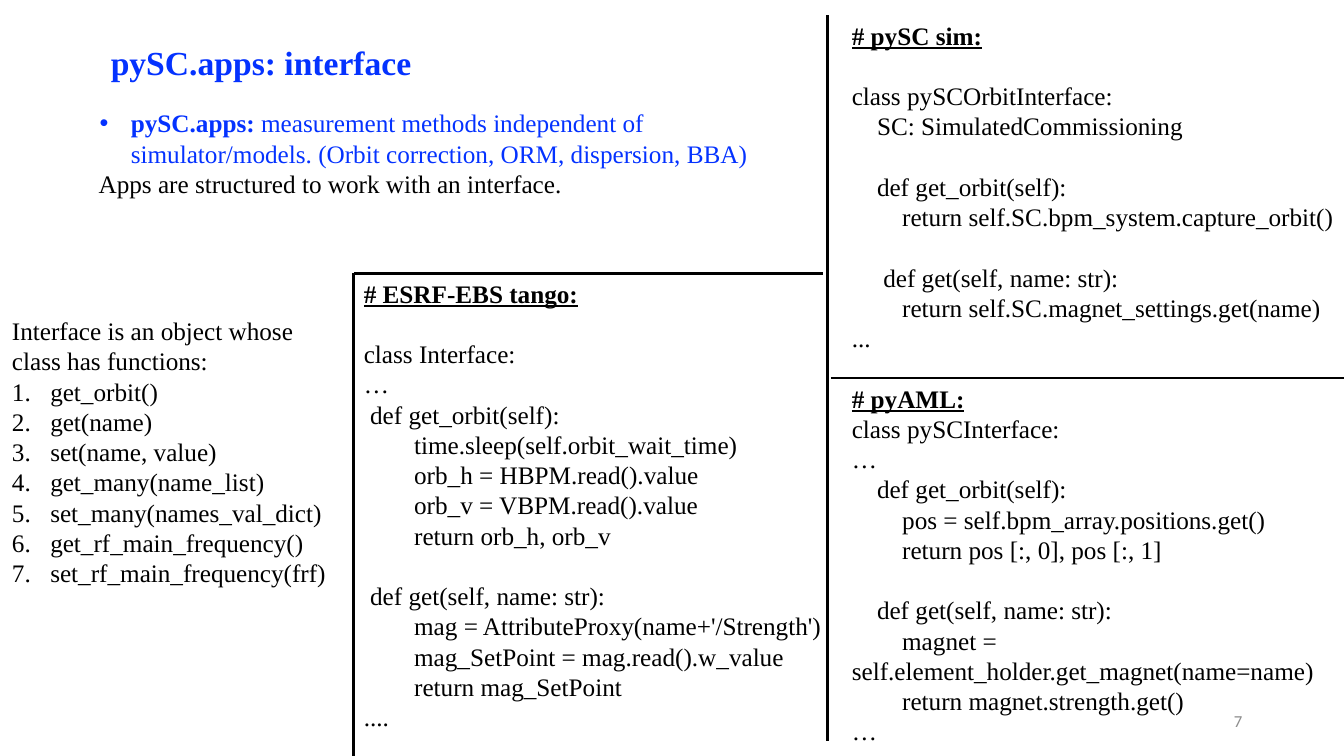
from lxml.etree import SubElement
from pptx import Presentation
from pptx.dml.color import RGBColor
from pptx.enum.shapes import MSO_CONNECTOR
from pptx.enum.text import MSO_ANCHOR, PP_ALIGN
from pptx.oxml.ns import qn
from pptx.util import Inches, Pt

COLORS = {"blue": "0432FF", "black": "000000", "gray": "8C8C8C"}
SERIF = "Times New Roman"
BODY = {"name": SERIF, "size": Pt(18)}
BOLD = {**BODY, "bold": True}
HEADING = {**BOLD, "underline": True}
BLANK_LINE = Pt(21.6)

TANGO = """# ESRF-EBS tango:

class Interface:
…
 def get_orbit(self):
        time.sleep(self.orbit_wait_time)
        orb_h = HBPM.read().value
        orb_v = VBPM.read().value
        return orb_h, orb_v

 def get(self, name: str):
        mag = AttributeProxy(name+'/Strength')
        mag_SetPoint = mag.read().w_value
        return mag_SetPoint
...."""

SIM_AND_AML = """# pySC sim:

class pySCOrbitInterface:
    SC: SimulatedCommissioning

    def get_orbit(self):
        return self.SC.bpm_system.capture_orbit()

     def get(self, name: str):
        return self.SC.magnet_settings.get(name)
...

# pyAML:
class pySCInterface:
…
    def get_orbit(self):
        pos = self.bpm_array.positions.get()
        return pos [:, 0], pos [:, 1]

    def get(self, name: str):
        magnet = self.element_holder.get_magnet(name=name)
        return magnet.strength.get()
…"""

FUNCTIONS = [
    "get_orbit()", "get(name)", "set(name, value)", "get_many(name_list)",
    "set_many(names_val_dict)", "get_rf_main_frequency()",
    "set_rf_main_frequency(frf)",
]

DIVIDERS = [
    (3.51, 2.71, 3.51, 7.5),
    (3.51, 2.71, 8.16, 2.71),
    (8.21, 0.15, 8.21, 7.35),
    (8.24, 3.75, 13.33, 3.75),
]


def add_box(slide, left, top, width, height):
    """Add a wrapping text box and return its text frame."""
    sp = slide.shapes.add_textbox(*map(Inches, (left, top, width, height)))
    tf = sp.text_frame
    tf.word_wrap = True
    return tf


def next_paragraph(tf):
    """Return the empty first paragraph, or a new one after it."""
    p = tf.paragraphs[0]
    return tf.add_paragraph() if p.runs else p


def add_run(p, text, color="black", style=BODY):
    """Add a run with the given colour and font values."""
    r = p.add_run()
    r.text = text
    for name, value in style.items():
        setattr(r.font, name, value)
    r.font.color.rgb = RGBColor.from_string(COLORS[color])


def set_bullet(p, margin, hanging, tag, **attributes):
    """Give a paragraph a hanging indent and a bullet element."""
    pPr = p._p.get_or_add_pPr()
    pPr.set("marL", str(Inches(margin)))
    pPr.set("indent", str(-Inches(hanging)))
    SubElement(pPr, qn("a:buFont"), typeface="Arial" if tag == "a:buChar" else "+mj-lt")
    SubElement(pPr, qn(tag), **attributes)


def add_code(slide, code, *box):
    """Add a code listing with underlined headings and spaced blocks."""
    tf = add_box(slide, *box)
    after_blank = False
    for line in code.splitlines():
        if line:
            p = next_paragraph(tf)
            if after_blank:
                p.space_before = BLANK_LINE
            add_run(p, line, style=HEADING if line.startswith("#") else BODY)
        after_blank = not line


def add_intro(slide):
    """Add the bulleted description of the apps."""
    tf = add_box(slide, 0.88, 1.02, 9.2, 1.01)
    p = next_paragraph(tf)
    set_bullet(p, 0.32, 0.31, "a:buChar", char="•")
    add_run(p, "pySC.apps:", "blue", BOLD)
    add_run(p, " measurement methods independent of ", "blue")
    p.add_line_break()
    add_run(p, "simulator/models. (Orbit correction, ORM, dispersion, BBA)", "blue")
    add_run(next_paragraph(tf), "Apps are structured to work with an interface.")


def add_function_list(slide):
    """Add the numbered list of interface functions."""
    tf = add_box(slide, 0.02, 3.08, 3.49, 2.83)
    add_run(next_paragraph(tf), "Interface is an object whose class has functions:")
    for function in FUNCTIONS:
        p = next_paragraph(tf)
        set_bullet(p, 0.38, 0.38, "a:buAutoNum", type="arabicPeriod")
        add_run(p, function)


def add_divider(slide, *ends):
    """Add a plain black line between two points."""
    line = slide.shapes.add_connector(MSO_CONNECTOR.STRAIGHT, *map(Inches, ends))
    line.line.width = Pt(2)
    line.line.color.rgb = RGBColor.from_string(COLORS["black"])
    SubElement(line._element.spPr, qn("a:effectLst"))


def add_page_number(slide, number):
    """Add the page number at the lower right."""
    tf = add_box(slide, 9.42, 6.95, 3, 0.4)
    tf.vertical_anchor = MSO_ANCHOR.MIDDLE
    p = next_paragraph(tf)
    p.alignment = PP_ALIGN.RIGHT
    add_run(p, number, "gray", {"name": "Calibri", "size": Pt(12)})


def main():
    """Build the slide and save it."""
    prs = Presentation()
    prs.slide_width, prs.slide_height = Inches(13.33), Inches(7.5)
    slide = prs.slides.add_slide(prs.slide_layouts[6])
    add_page_number(slide, "7")
    title = next_paragraph(add_box(slide, 1, 0.37, 5.92, 0.5))
    add_run(title, "pySC.apps: interface", "blue", {**BOLD, "size": Pt(24)})
    add_intro(slide)
    add_code(slide, TANGO, 3.51, 2.71, 4.99, 4.64)
    add_code(slide, SIM_AND_AML, 8.35, 0.15, 4.99, 7.37)
    add_function_list(slide)
    for ends in DIVIDERS:
        add_divider(slide, *ends)
    prs.save("out.pptx")


if __name__ == "__main__":
    main()
